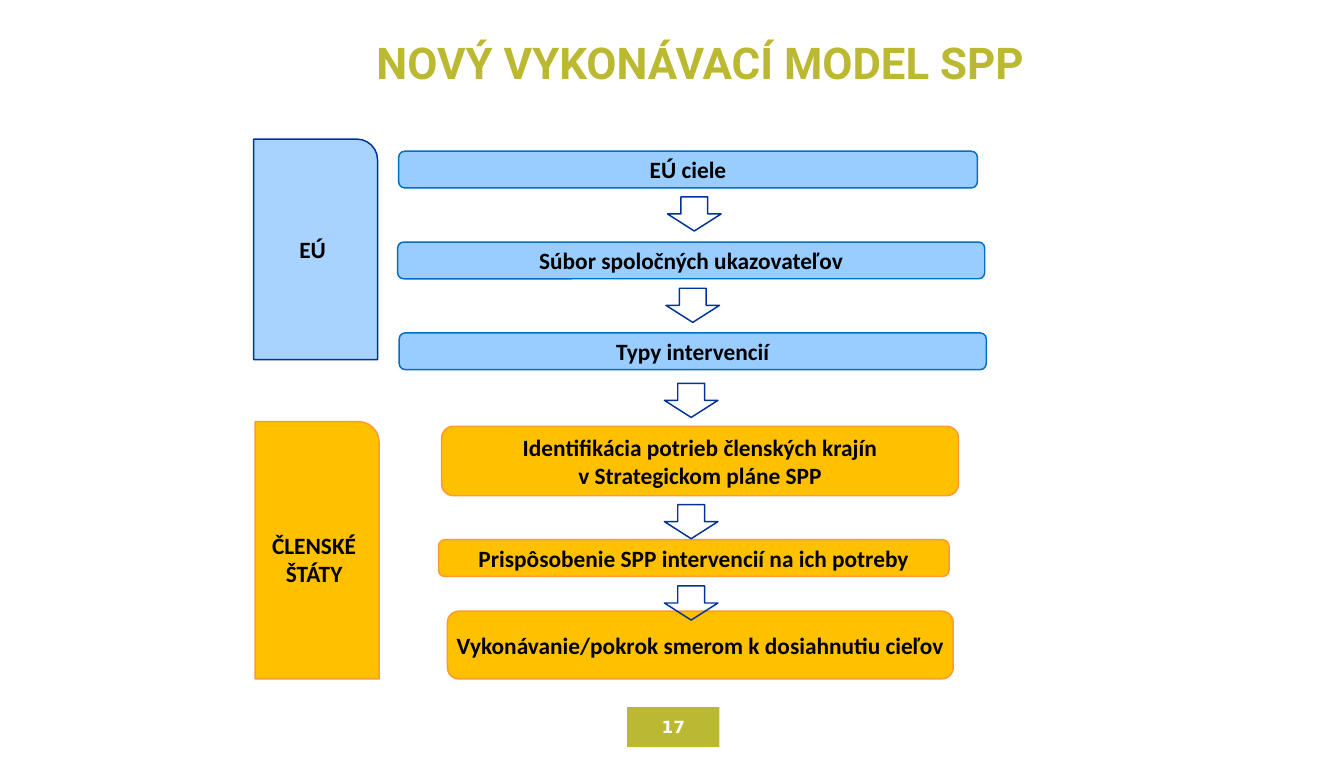
from lxml import etree
from pptx import Presentation
from pptx.dml.color import RGBColor
from pptx.enum.shapes import MSO_SHAPE
from pptx.enum.text import MSO_ANCHOR, PP_ALIGN
from pptx.oxml.ns import qn
from pptx.util import Inches, Pt

RECTANGLE = MSO_SHAPE.RECTANGLE
ROUNDED = MSO_SHAPE.ROUNDED_RECTANGLE
ONE_CORNER = MSO_SHAPE.ROUND_1_RECTANGLE
DOWN_ARROW = MSO_SHAPE.DOWN_ARROW
MIDDLE, TOP = MSO_ANCHOR.MIDDLE, MSO_ANCHOR.TOP
CENTER, LEFT = PP_ALIGN.CENTER, PP_ALIGN.LEFT

COLORS = {
    "sky": "99CCFF", "blue": "0070C0", "navy": "003399",
    "amber": "FFC000", "orange": "FF9933",
    "olive": "BBB831", "black": "000000", "white": "FFFFFF",
}
FORMATS = {
    "title": {"name": "Roboto", "size": Pt(60), "bold": True},
    "label": {"name": "Calibri", "size": Pt(32), "bold": True},
    "number": {"name": "DejaVu Sans", "size": Pt(23), "bold": True},
}


class SlideBuilder:
    def __init__(self, slide):
        self.slide = slide

    def color(self, name):
        return RGBColor.from_string(COLORS[name])

    def set_text(self, shape, text, style="label", color="black",
                 align=CENTER, anchor=MIDDLE, top_inset=0.05):
        frame = shape.text_frame
        frame.word_wrap = True
        frame.vertical_anchor = anchor
        frame.margin_top = Inches(top_inset)
        frame.text = text
        for paragraph in frame.paragraphs:
            paragraph.alignment = align
            for attribute, value in FORMATS[style].items():
                setattr(paragraph.font, attribute, value)
            paragraph.font.color.rgb = self.color(color)

    def shape(self, kind, box, fill=None, line=None, opacity=None):
        shape = self.slide.shapes.add_shape(kind, *map(Inches, box))
        shape.shadow.inherit = False
        if fill:
            shape.fill.solid()
            shape.fill.fore_color.rgb = self.color(fill)
        else:
            shape.fill.background()
        if opacity:
            solid = shape.element.spPr.find(qn("a:solidFill"))
            etree.SubElement(solid[0], qn("a:alpha"), val=str(opacity * 1000))
        if line:
            shape.line.color.rgb = self.color(line)
            shape.line.width = Pt(2)
        else:
            shape.line.fill.background()
        return shape

    def step(self, text, box, fill, line):
        shape = self.shape(ROUNDED, box, fill, line)
        shape.text_frame.margin_left = shape.text_frame.margin_right = Inches(0.05)
        self.set_text(shape, text)

    def level(self, text, box, fill, line, opacity=None, top_inset=0.05):
        shape = self.shape(ONE_CORNER, box, fill, line, opacity)
        self.set_text(shape, text, top_inset=top_inset)

    def arrow(self, left, top):
        self.shape(DOWN_ARROW, (left, top, 1.02, 0.65), line="navy")

    def title(self, text, box):
        shape = self.slide.shapes.add_textbox(*map(Inches, box))
        self.set_text(shape, text, "title", "olive", LEFT, TOP)

    def page_number(self, text, box):
        shape = self.shape(RECTANGLE, box, "olive")
        self.set_text(shape, text, "number", "white")


def main():
    presentation = Presentation()
    presentation.slide_width = Inches(25.59)
    presentation.slide_height = Inches(14.57)
    slide = presentation.slides.add_slide(presentation.slide_layouts[6])
    builder = SlideBuilder(slide)

    builder.title("NOVÝ VYKONÁVACÍ MODEL SPP", (7.07, 0.63, 14.34, 1.72))

    # Levels of responsibility
    eu, states = ("sky", "blue"), ("amber", "orange")
    builder.level("EÚ", (4.83, 2.65, 2.36, 4.2), "sky", "navy", opacity=85)
    builder.level("ČLENSKÉ ŠTÁTY", (4.86, 8.03, 2.36, 4.9), *states, top_inset=0.38)

    # Steps of the model
    steps = [
        ("EÚ ciele", (7.59, 2.88, 11.02, 0.7), eu),
        ("Súbor spoločných ukazovateľov", (7.57, 4.61, 11.18, 0.7), eu),
        ("Typy intervencií", (7.6, 6.34, 11.18, 0.7), eu),
        ("Identifikácia potrieb členských krajín\nv Strategickom pláne SPP",
         (8.41, 8.12, 9.84, 1.32), states),
        ("Prispôsobenie SPP intervencií na ich potreby",
         (8.35, 10.28, 9.72, 0.7), states),
        ("Vykonávanie/pokrok smerom k dosiahnutiu cieľov",
         (8.52, 11.64, 9.63, 1.29), states),
    ]
    for text, box, colors in steps:
        builder.step(text, box, *colors)

    # Arrows between the steps
    for left, top in [(12.71, 3.75), (12.68, 5.49), (12.65, 7.3),
                      (12.65, 9.61), (12.65, 11.16)]:
        builder.arrow(left, top)

    builder.page_number("17", (11.94, 13.47, 1.76, 0.76))
    presentation.save("out.pptx")


if __name__ == "__main__":
    main()
